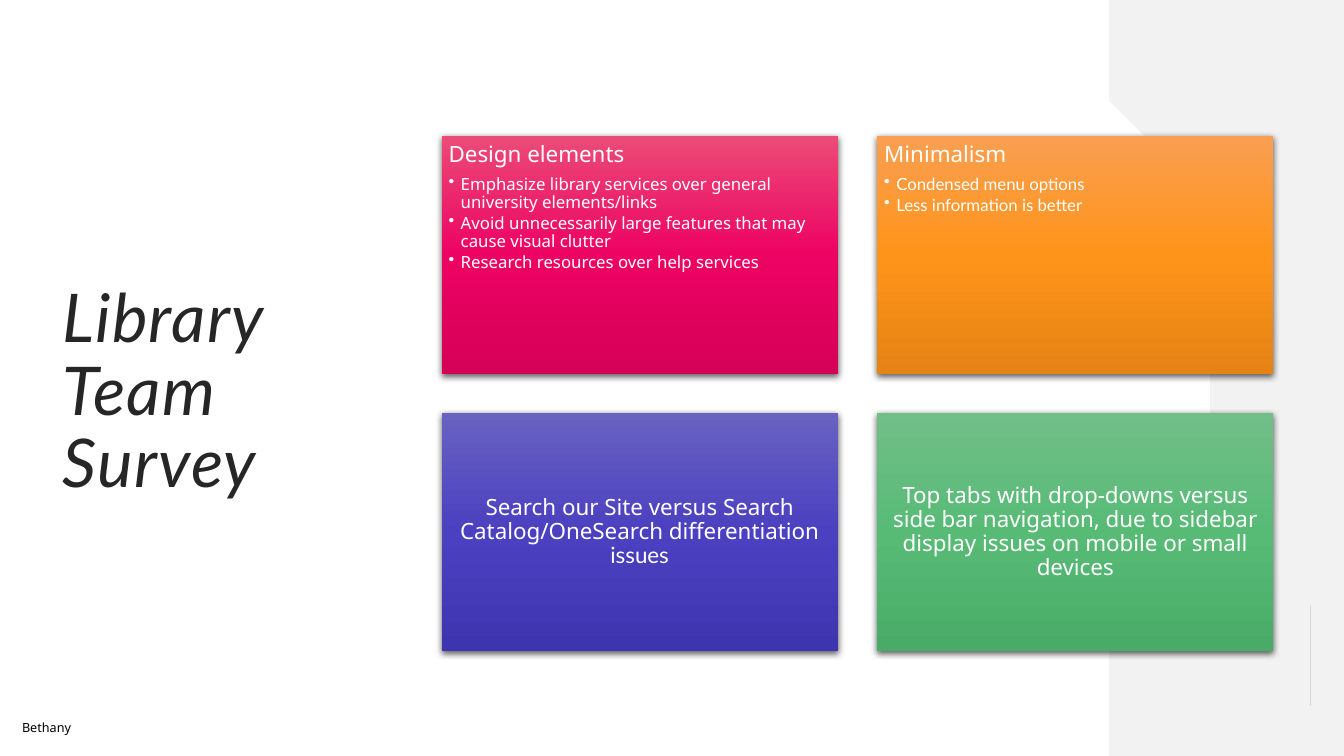
from math import asin, cos, pi, sin

from pptx import Presentation
from pptx.dml.color import RGBColor
from pptx.enum.shapes import MSO_SHAPE
from pptx.enum.text import MSO_ANCHOR, PP_ALIGN
from pptx.oxml import parse_xml
from pptx.oxml.ns import nsdecls
from pptx.util import Inches, Pt

RECT = MSO_SHAPE.RECTANGLE
TOP, MIDDLE = MSO_ANCHOR.TOP, MSO_ANCHOR.MIDDLE
LEFT, CENTER = PP_ALIGN.LEFT, PP_ALIGN.CENTER
WHITE = RGBColor(0xFF, 0xFF, 0xFF)
BLACK = RGBColor(0, 0, 0)
DARK = RGBColor(0x26, 0x26, 0x26)
PALE = RGBColor(0xF2, 0xF2, 0xF2)
LATO, NOTO = "Lato", "Noto Sans"
WIDE, HIGH = 13.33, 7.5

deck = Presentation()
deck.slide_width, deck.slide_height = Inches(WIDE), Inches(HIGH)
slide = deck.slides.add_slide(deck.slide_layouts[6])
shapes = slide.shapes
slide.background.fill.solid()
slide.background.fill.fore_color.rgb = PALE


def add_run(para, text, size, face, color):
    run = para.add_run()
    run.text = text
    run.font.size, run.font.name = Pt(size), face
    run.font.color.rgb = color
    return run


def add_arc(mid_x, mid_y, radius, start, end, corners, color):
    steps = 48
    turns = [start + (end - start) * i / steps for i in range(steps + 1)]
    points = [(mid_x + radius * cos(t), mid_y + radius * sin(t)) for t in turns]
    pen = shapes.build_freeform(*points[0], scale=Inches(1))
    pen.add_line_segments(points[1:] + corners, close=True)
    form = pen.convert_to_shape()
    form.shadow.inherit = False
    form.fill.solid()
    form.fill.fore_color.rgb = color
    form.line.fill.background()


# Backdrop: white field with a bowed edge, dark half disc
bow = 7.96
lean = asin(HIGH / 2 / bow)
add_arc(11.84 - bow, HIGH / 2, bow, -lean, lean, [(0, HIGH), (0, 0)], WHITE)
add_arc(WIDE, 6.77, 0.45, pi / 2, pi * 3 / 2, [], DARK)

# Title
title = shapes.add_textbox(Inches(0.52), Inches(2.75), Inches(3.41), Inches(2.31))
frame = title.text_frame
frame.word_wrap, frame.vertical_anchor = True, MIDDLE
para = frame.paragraphs[0]
para.line_spacing = 0.9
run = add_run(para, "Library Team Survey", 48, LATO, DARK)
run.font.italic = True
run.font._element.set("spc", "100")

# Cards: gradient, heading runs, bullet face, bullets
CARDS = [
    (("EB4B78", "ED0363", "D50058"), [("Design elements", NOTO)], NOTO,
     ["Emphasize library services over general university elements/links",
      "Avoid unnecessarily large features that may cause visual clutter",
      "Research resources over help services"]),
    (("F99F51", "FF941A", "E58315"), [("Minimalism", NOTO)], LATO,
     ["Condensed menu options", "Less information is better"]),
    (("6962C1", "4B40BF", "3F34AF"),
     [("Search our Site versus Search Catalog/OneSearch differentiation ", NOTO),
      ("issues", LATO)], NOTO, []),
    (("72BE88", "57BB76", "49AB67"),
     [("Top tabs with drop-downs versus side bar navigation, due to sidebar "
       "display issues on mobile or small devices", NOTO)], NOTO, []),
]
CARD_W, CARD_H, GAP = 3.93, 2.36, 0.39
for i, (tones, heads, face, items) in enumerate(CARDS):
    row, col = divmod(i, 2)
    card = shapes.add_shape(
        RECT, Inches(4.38 + col * (CARD_W + GAP)), Inches(1.35 + row * (CARD_H + GAP)),
        Inches(CARD_W), Inches(CARD_H))
    card.line.fill.background()

    # Gradient and shadow
    stops = "".join(f'<a:gs pos="{n * 50000}"><a:srgbClr val="{tone}"/></a:gs>'
                    for n, tone in enumerate(tones))
    props = card._element.spPr
    props.insert(2, parse_xml(
        f'<a:gradFill {nsdecls("a")} rotWithShape="1"><a:gsLst>{stops}</a:gsLst>'
        '<a:lin ang="5400000" scaled="0"/></a:gradFill>'))
    props.append(parse_xml(
        f'<a:effectLst {nsdecls("a")}><a:outerShdw blurRad="{Pt(4.5)}" dist="{Pt(1.5)}" '
        'dir="5400000" algn="ctr" rotWithShape="0"><a:srgbClr val="000000">'
        '<a:alpha val="63000"/></a:srgbClr></a:outerShdw></a:effectLst>'))

    # Heading
    frame = card.text_frame
    frame.word_wrap = True
    frame.vertical_anchor = TOP if items else MIDDLE
    frame.margin_left = frame.margin_right = Inches(0.07)
    frame.margin_top = frame.margin_bottom = Inches(0.07)
    para = frame.paragraphs[0]
    para.alignment = LEFT if items else CENTER
    para.line_spacing, para.space_after = 0.9, Pt(6)
    for text, font in heads:
        add_run(para, text, 16, font, WHITE)

    # Bullets
    for item in items:
        para = frame.add_paragraph()
        para.level, para.alignment = 1, LEFT
        para.line_spacing, para.space_after = 0.9, Pt(2)
        indent = para._p.get_or_add_pPr()
        indent.set("marL", str(Inches(0.12)))
        indent.set("indent", str(-Inches(0.12)))
        indent.append(parse_xml(f'<a:buChar {nsdecls("a")} char="•"/>'))
        add_run(para, item, 12, face, WHITE)

# Speaker name
name = shapes.add_textbox(Inches(0.12), Inches(7.09), Inches(0.72), Inches(0.25))
add_run(name.text_frame.paragraphs[0], "Bethany", 9, NOTO, BLACK)

deck.save("out.pptx")
